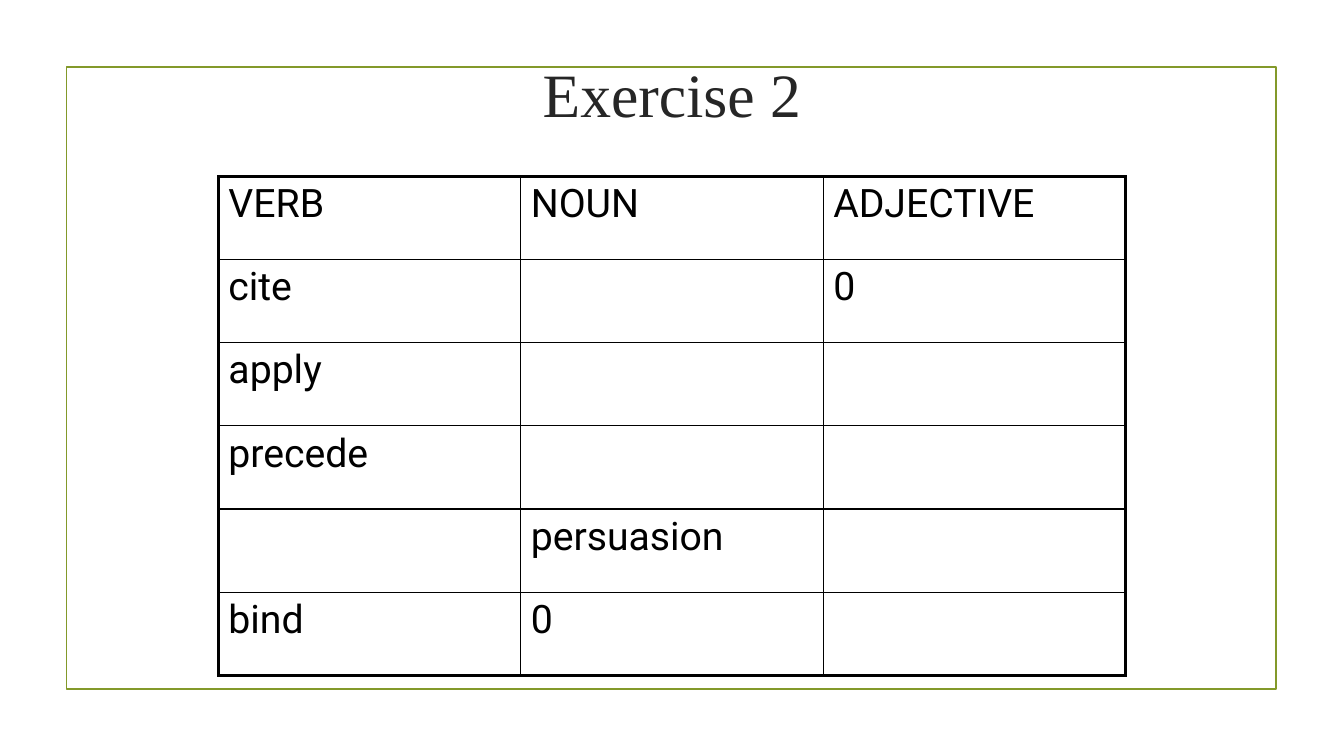
import lxml.etree
import pptx
import pptx.dml.color
import pptx.enum.shapes
import pptx.enum.text
import pptx.oxml.ns
import pptx.util

Pt = pptx.util.Pt
RGBColor = pptx.dml.color.RGBColor

BLACK = RGBColor(0x00, 0x00, 0x00)
TITLE_GRAY = RGBColor(0x26, 0x26, 0x26)
FRAME_GREEN = RGBColor(0x83, 0x99, 0x2A)

INNER_BORDER = 1
OUTER_BORDER = 2.25
ROW_HEIGHT = 59.4
COLUMN_WIDTH = 216

WORD_FORMS = [
    ["VERB", "NOUN", "ADJECTIVE"],
    ["cite", "", "0"],
    ["apply", "", ""],
    ["precede", "", ""],
    ["", "persuasion", ""],
    ["bind", "0", ""],
]


def write_text(text_frame, text, alignment, font_name, size, color):
    paragraph = text_frame.paragraphs[0]
    paragraph.text = text
    paragraph.alignment = alignment
    font_format = {"name": font_name, "size": Pt(size)}
    for attribute, value in font_format.items():
        setattr(paragraph.font, attribute, value)
    paragraph.font.color.rgb = color


def add_frame(slide, left, top, width, height):
    frame = slide.shapes.add_shape(
        pptx.enum.shapes.MSO_SHAPE.RECTANGLE, Pt(left), Pt(top), Pt(width), Pt(height))
    frame.shadow.inherit = False
    frame.fill.background()
    frame.line.color.rgb = FRAME_GREEN
    frame.line.width = Pt(1.25)


def add_title(slide, text, left, top, width, height):
    title = slide.shapes.add_textbox(Pt(left), Pt(top), Pt(width), Pt(height))
    frame_format = {
        "word_wrap": True,
        "vertical_anchor": pptx.enum.text.MSO_ANCHOR.MIDDLE,
    }
    for attribute, value in frame_format.items():
        setattr(title.text_frame, attribute, value)
    write_text(title.text_frame, text, pptx.enum.text.PP_ALIGN.CENTER,
               "Times New Roman", 44, TITLE_GRAY)


def set_borders(cell, widths):
    """Draw black cell borders; widths maps L, R, T and B to points."""
    qualified = pptx.oxml.ns.qn
    properties = cell._tc.get_or_add_tcPr()
    for side, width in widths.items():
        line = lxml.etree.SubElement(
            properties, qualified(f"a:ln{side}"), w=str(Pt(width)))
        fill = lxml.etree.SubElement(line, qualified("a:solidFill"))
        lxml.etree.SubElement(fill, qualified("a:srgbClr"), val=str(BLACK))


def add_word_table(slide, rows, left, top):
    """Add a table with a thick outline and thin inner lines."""
    row_count, column_count = len(rows), len(rows[0])
    table = slide.shapes.add_table(
        row_count, column_count, Pt(left), Pt(top),
        Pt(COLUMN_WIDTH * column_count), Pt(ROW_HEIGHT * row_count)).table
    for row_index, words in enumerate(rows):
        for column_index, word in enumerate(words):
            cell = table.cell(row_index, column_index)
            on_outline = {
                "L": column_index == 0,
                "R": column_index == column_count - 1,
                "T": row_index == 0,
                "B": row_index == row_count - 1,
            }
            set_borders(cell, {side: OUTER_BORDER if outer else INNER_BORDER
                               for side, outer in on_outline.items()})
            cell.fill.background()
            write_text(cell.text_frame, word, pptx.enum.text.PP_ALIGN.LEFT,
                       "Roboto", 28, BLACK)
            cell.text_frame.paragraphs[0].font.bold = False


def main():
    presentation = pptx.Presentation()
    presentation.slide_width = Pt(960)
    presentation.slide_height = Pt(540)
    slide = presentation.slides.add_slide(presentation.slide_layouts[6])
    add_frame(slide, 47.5, 48, 864, 444)
    add_title(slide, "Exercise 2", 48, 21.6, 864, 90)
    add_word_table(slide, WORD_FORMS, 156, 126)
    presentation.save("out.pptx")


if __name__ == "__main__":
    main()
